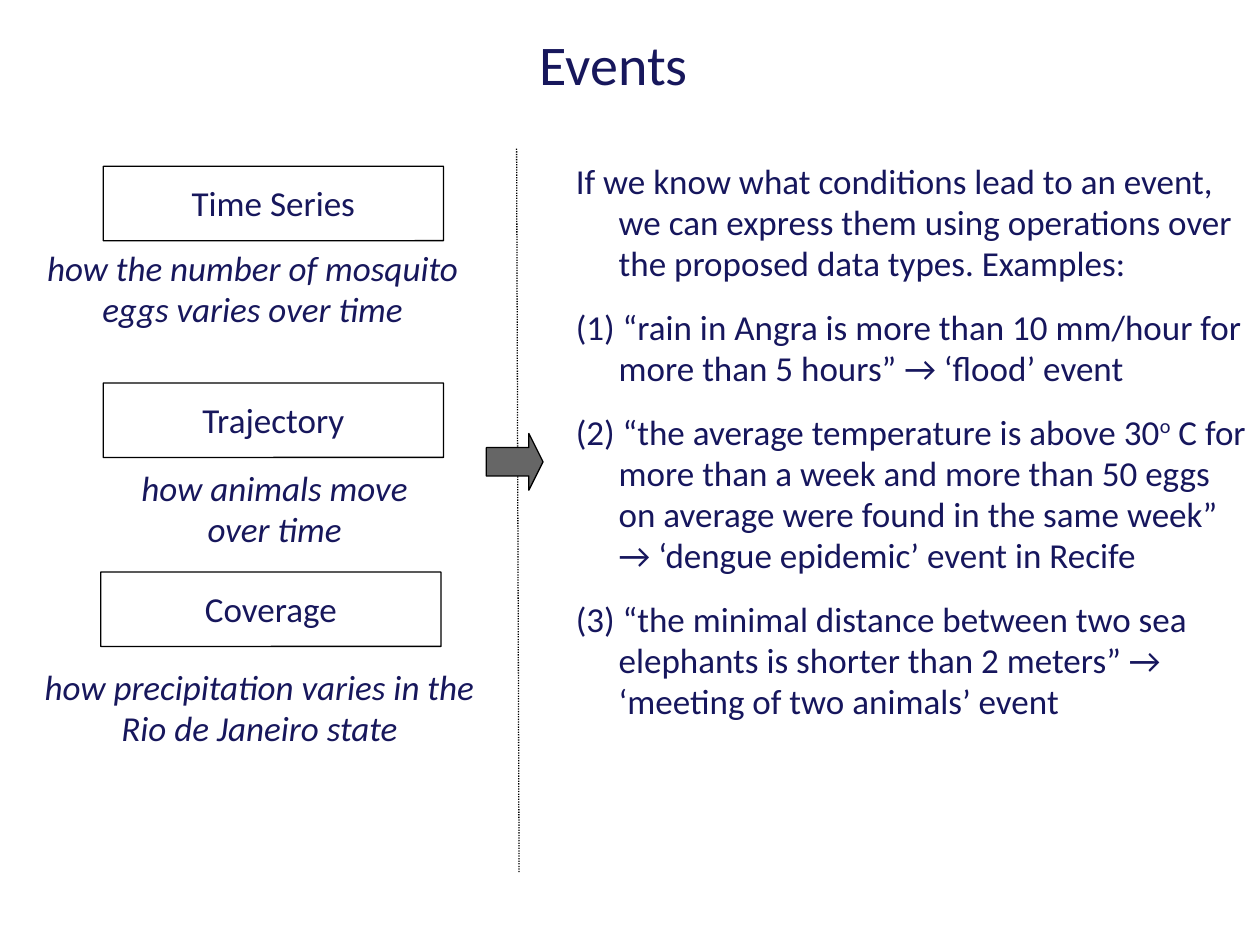
from lxml import etree
from pptx import Presentation
from pptx.dml.color import RGBColor
from pptx.enum.dml import MSO_LINE
from pptx.enum.shapes import MSO_CONNECTOR, MSO_SHAPE
from pptx.enum.text import MSO_ANCHOR, PP_ALIGN
from pptx.oxml.ns import qn
from pptx.util import Inches, Pt

LEFT, CENTER = PP_ALIGN.LEFT, PP_ALIGN.CENTER
TOP, MIDDLE = MSO_ANCHOR.TOP, MSO_ANCHOR.MIDDLE
BOX, ARROW = MSO_SHAPE.ROUNDED_RECTANGLE, MSO_SHAPE.RIGHT_ARROW
STRAIGHT, DOTTED = MSO_CONNECTOR.STRAIGHT, MSO_LINE.ROUND_DOT
COLORS = {"title": "17175C", "body": "16165D", "line": "000000", "arrow": "666666"}
COLUMNS, ROWS = 100, 75
LABEL_INSETS = (0.09, 0.05, 0.09, 0.04)
PLAIN_INSETS = (0, 0.01, 0, 0)
BOX_WIDTH, BOX_HEIGHT = 27, 5.9

TYPES = [
    ("Time Series", (8.2, 13.2),
     "how the number of mosquito eggs varies over time", (2.6, 19.2, 34.9, 9.2)),
    ("Trajectory", (8.2, 30.4),
     "how animals move over time", (9.3, 36.7, 25, 7.2)),
    ("Coverage", (8, 45.4),
     "how precipitation varies in the Rio de Janeiro state", (2, 52.5, 37.2, 9.2)),
]
EXAMPLES = [
    [("If we know what conditions lead to an event, we can express them using "
      "operations over the proposed data types. Examples:", False)],
    [("(1) “rain in Angra is more than 10 mm/hour for more than 5 hours” → "
      "‘flood’ event", False)],
    [("(2) “the average temperature is above 30", False), ("o", True),
     (" C for more than a week and more than 50 eggs on average were found in the "
      "same week” → ‘dengue epidemic’ event in Recife", False)],
    [("(3) “the minimal distance between two sea elephants is shorter than "
      "2 meters” → ‘meeting of two animals’ event", False)],
]


class SlideBuilder:
    """Draws styled elements on one slide, placed by grid columns and rows."""

    def __init__(self, presentation):
        self.column = presentation.slide_width / COLUMNS
        self.row = presentation.slide_height / ROWS
        self.font = "Calibri"
        self.slide = presentation.slides.add_slide(presentation.slide_layouts[6])

    def place(self, *grid):
        return [round(value * (self.row if index % 2 else self.column))
                for index, value in enumerate(grid)]

    def outline(self, shape):
        shape.line.color.rgb = RGBColor.from_string(COLORS["line"])
        shape.line.width = Pt(0.75)

    def fill_text(self, shape, paragraphs, size=20, color="title", align=CENTER,
                  anchor=TOP, insets=LABEL_INSETS, italic=False, hanging=0, after=0):
        frame = shape.text_frame
        frame.word_wrap = True
        frame.vertical_anchor = anchor
        (frame.margin_left, frame.margin_top,
         frame.margin_right, frame.margin_bottom) = map(Inches, insets)
        for index, runs in enumerate(paragraphs):
            paragraph = frame.add_paragraph() if index else frame.paragraphs[0]
            paragraph.alignment = align
            paragraph.line_spacing = 0.98
            paragraph.space_after = Pt(after)
            if hanging:
                properties = paragraph._p.get_or_add_pPr()
                properties.set("marL", str(Inches(hanging)))
                properties.set("indent", str(-Inches(hanging)))
            for text, superscript in runs:
                run = paragraph.add_run()
                run.text = text
                run.font.name = self.font
                run.font.size = Pt(size)
                run.font.italic = italic
                run.font.color.rgb = RGBColor.from_string(COLORS[color])
                if superscript:
                    run._r.get_or_add_rPr().set("baseline", "33000")

    def text(self, grid, paragraphs, **style):
        box = self.slide.shapes.add_textbox(*self.place(*grid))
        self.fill_text(box, paragraphs, **style)

    def shape(self, kind, grid, adjustments, fill=None):
        shape = self.slide.shapes.add_shape(kind, *self.place(*grid))
        for index, value in enumerate(adjustments):
            shape.adjustments[index] = value
        shape.shadow.inherit = False
        if fill:
            shape.fill.solid()
            shape.fill.fore_color.rgb = RGBColor.from_string(COLORS[fill])
        else:
            shape.fill.background()
        self.outline(shape)
        return shape

    def label_box(self, corner, label):
        box = self.shape(BOX, (*corner, BOX_WIDTH, BOX_HEIGHT), [0.003])
        self.fill_text(box, [[(label, False)]], anchor=MIDDLE)

    def divider(self, *ends):
        line = self.slide.shapes.add_connector(STRAIGHT, *self.place(*ends))
        self.outline(line)
        line.line.dash_style = DOTTED
        etree.SubElement(line._element.spPr, qn("a:effectLst"))


def main():
    presentation = Presentation()
    presentation.slide_width, presentation.slide_height = Inches(10), Inches(7.5)
    builder = SlideBuilder(presentation)
    builder.text((0.3, 1.3, 96.8, 7.7), [[("Events", False)]], size=32,
                 anchor=MIDDLE, insets=PLAIN_INSETS)
    for label, corner, caption, caption_grid in TYPES:
        builder.label_box(corner, label)
        builder.text(caption_grid, [[(caption, False)]], italic=True)
    builder.divider(41, 11.8, 41.2, 69.3)
    builder.shape(ARROW, (38.6, 34.4, 4.5, 4.5), [0.5, 0.25], fill="arrow")
    builder.text((45.7, 12.7, 53.2, 57), EXAMPLES, color="body", align=LEFT,
                 insets=PLAIN_INSETS, hanging=0.34, after=12.9)
    presentation.save("out.pptx")


if __name__ == "__main__":
    main()
